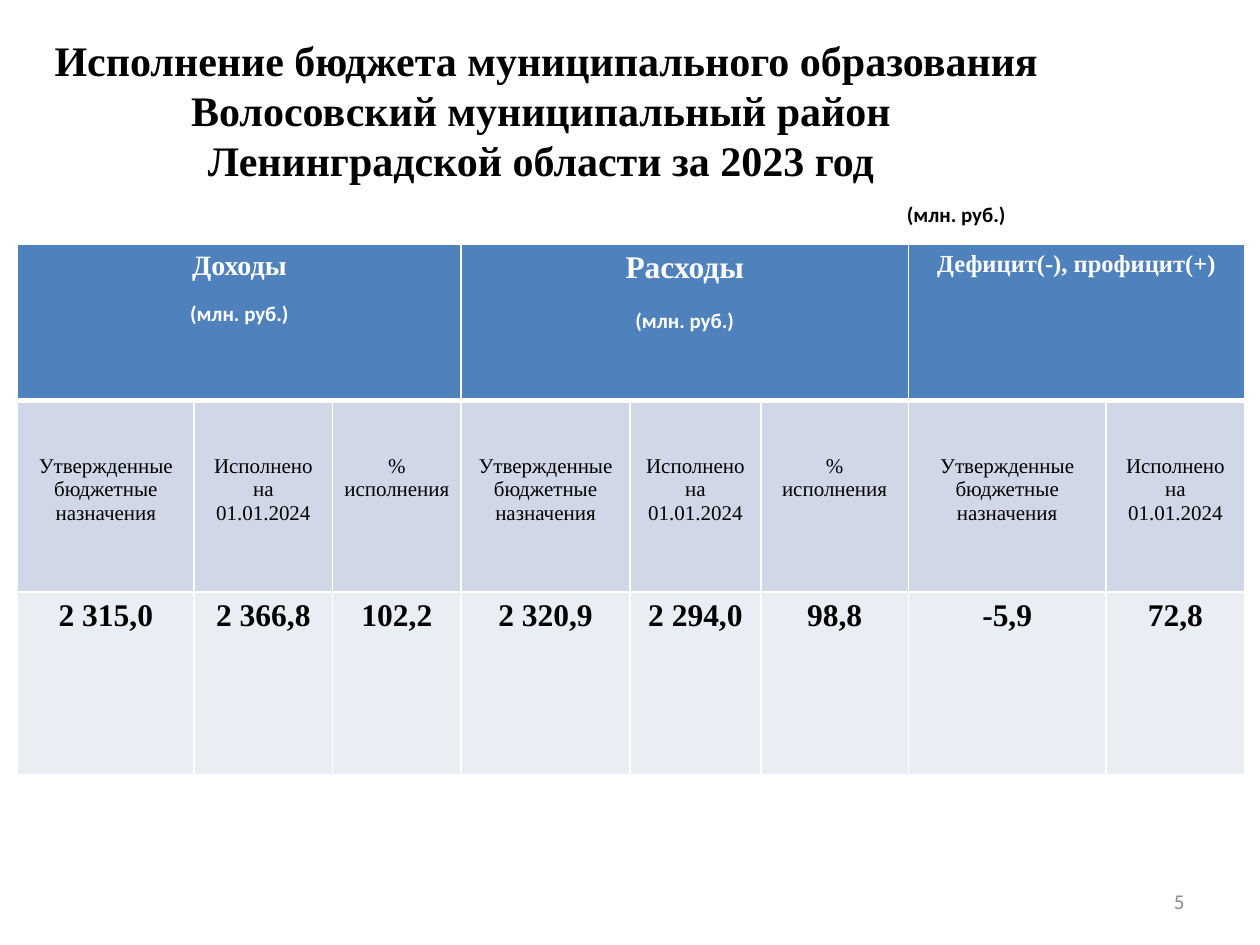
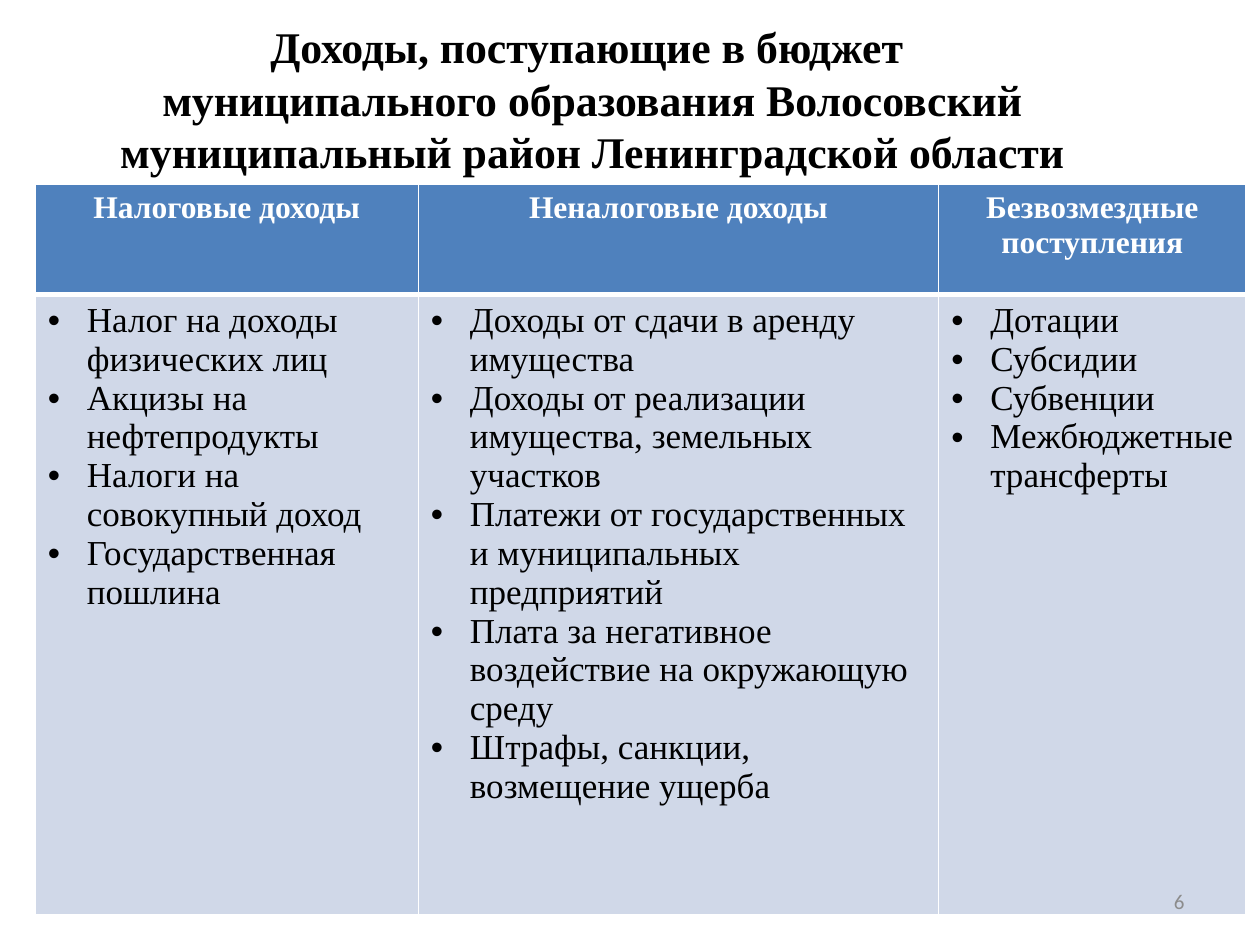
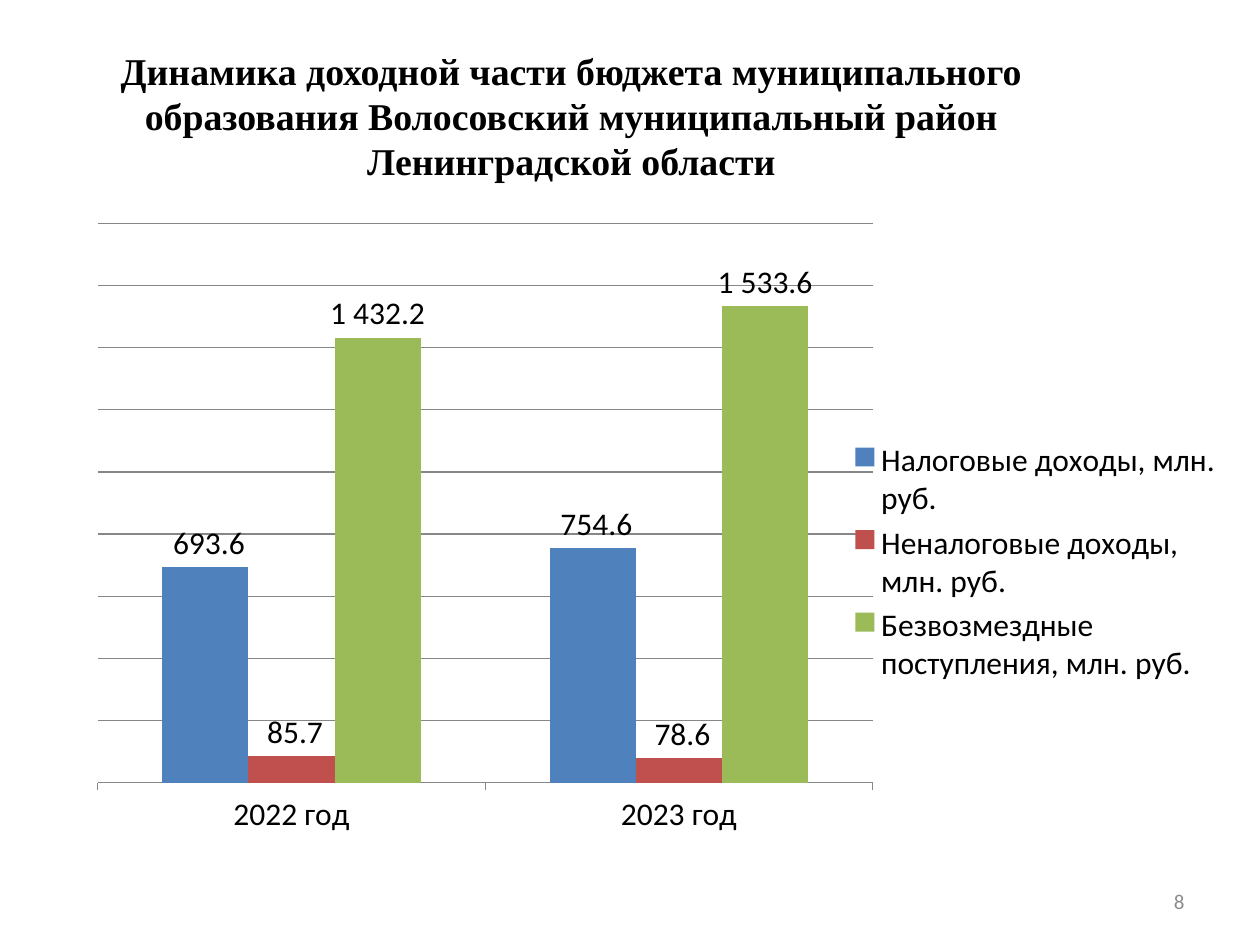
from dataclasses import dataclass

from lxml import etree
from pptx import Presentation
from pptx.chart.data import CategoryChartData
from pptx.dml.color import RGBColor
from pptx.enum.chart import XL_CHART_TYPE, XL_LABEL_POSITION, XL_LEGEND_POSITION, XL_TICK_MARK
from pptx.enum.text import MSO_ANCHOR, PP_ALIGN
from pptx.oxml import parse_xml
from pptx.oxml.ns import nsdecls, qn
from pptx.util import Emu, Pt

LEFT, CENTER, RIGHT = PP_ALIGN.LEFT, PP_ALIGN.CENTER, PP_ALIGN.RIGHT
TOP, MIDDLE = MSO_ANCHOR.TOP, MSO_ANCHOR.MIDDLE
COLUMNS = XL_CHART_TYPE.COLUMN_CLUSTERED
OUTSIDE_END = XL_LABEL_POSITION.OUTSIDE_END
LEGEND_RIGHT = XL_LEGEND_POSITION.RIGHT
TICK_OUT = XL_TICK_MARK.OUTSIDE

EMU_PER_PX = 9144  # 100 px to the inch


@dataclass(frozen=True)
class Theme:
    serif: str = "Times New Roman"
    sans: str = "Calibri"
    text: str = "000000"
    light: str = "FFFFFF"
    muted: str = "8C8C8C"
    grid: str = "878787"
    header_fill: str = "4F81BD"
    band_fill: str = "D0D8E8"
    pale_fill: str = "E9EDF4"
    series: tuple = ("4F81BD", "C0504D", "9BBB59")
    small: int = 12
    note: int = 14
    heading: int = 16
    large: int = 18
    body: int = 20


THEME = Theme()


def px(length):
    return Emu(length * EMU_PER_PX)


def add_bullet(paragraph, indent):
    properties = paragraph._p.get_or_add_pPr()
    properties.set("marL", str(px(indent)))
    properties.set("indent", str(-px(indent)))
    font = etree.SubElement(properties, qn("a:buFont"))
    font.set("typeface", "Arial")
    etree.SubElement(properties, qn("a:buChar")).set("char", "•")


def write(frame, text, size=THEME.small, font=THEME.serif, color=THEME.text, bold=False,
          align=LEFT, bullet=0, append=False, space_before=0):
    """Write each line of text as a paragraph; append keeps what is there."""
    for number, line in enumerate(text.split("\n")):
        is_first = number == 0 and not append
        paragraph = frame.paragraphs[0] if is_first else frame.add_paragraph()
        paragraph.text = line
        paragraph.alignment = align
        if space_before and not is_first:
            paragraph.space_before = Pt(space_before)
        if bullet:
            add_bullet(paragraph, bullet)
        for run in paragraph.runs:
            run.font.size = Pt(size)
            run.font.name = font
            run.font.bold = bold
            run.font.color.rgb = RGBColor.from_string(color)


class Deck:
    def __init__(self, theme):
        self.theme = theme
        self.presentation = Presentation()
        self.presentation.slide_width = px(1000)
        self.presentation.slide_height = px(750)
        self.slide = None

    def new_slide(self, page):
        self.slide = self.presentation.slides.add_slide(self.presentation.slide_layouts[6])
        self.page = page

    def text(self, box, text, anchor=TOP, bottom=5, **style):
        shape = self.slide.shapes.add_textbox(*map(px, box))
        frame = shape.text_frame
        frame.word_wrap = True
        frame.vertical_anchor = anchor
        frame.margin_bottom = px(bottom)
        write(frame, text, **style)

    def title(self, box, text, size, bottom=5):
        self.text(box, text, anchor=MIDDLE, bottom=bottom, size=size, bold=True, align=CENTER)

    def page_number(self):
        self.text((717, 695, 233, 40), self.page, anchor=MIDDLE, font=self.theme.sans,
                  color=self.theme.muted, align=RIGHT)

    def table(self, left, top, widths, heights, fills):
        """Add a table whose rows have the given fills; the first is the header."""
        frame = self.slide.shapes.add_table(len(heights), len(widths), px(left), px(top),
                                            px(sum(widths)), px(sum(heights)))
        table = frame.table
        table.first_row = table.horz_banding = False
        for column, width in zip(table.columns, widths):
            column.width = px(width)
        for index, (row, height, fill) in enumerate(zip(table.rows, heights, fills)):
            row.height = px(height)
            for cell in row.cells:
                self.borders(cell, top=3 if index == 1 else 1, bottom=3 if index == 0 else 1)
                cell.fill.solid()
                cell.fill.fore_color.rgb = RGBColor.from_string(fill)
        return table

    def borders(self, cell, top, bottom):
        properties = cell._tc.get_or_add_tcPr()
        for side, width in (("L", 1), ("R", 1), ("T", top), ("B", bottom)):
            properties.append(parse_xml(
                f'<a:ln{side} {nsdecls("a")} w="{Pt(width)}"><a:solidFill>'
                f'<a:srgbClr val="{self.theme.light}"/></a:solidFill></a:ln{side}>'))

    def cell(self, cell, text, side=10, top=5, **style):
        cell.margin_left = cell.margin_right = px(side)
        cell.margin_top = px(top)
        write(cell.text_frame, text, **style)

    def column_chart(self, box, categories, series, plot, number_format):
        data = CategoryChartData(number_format=number_format)
        data.categories = categories
        for name, values in series:
            data.add_series(name, values)
        chart = self.slide.shapes.add_chart(COLUMNS, *map(px, box), data).chart
        chart.has_title = False
        chart.font.size = Pt(self.theme.large)
        chart.font.name = self.theme.sans
        chart.font.color.rgb = RGBColor.from_string(self.theme.text)

        # Axes
        grid_color = RGBColor.from_string(self.theme.grid)
        value_axis = chart.value_axis
        value_axis.visible = False
        value_axis.minimum_scale, value_axis.maximum_scale = 0, 1800
        value_axis.major_unit = 200
        value_axis.has_major_gridlines = True
        category_axis = chart.category_axis
        category_axis.major_tick_mark = TICK_OUT
        for line in (value_axis.major_gridlines.format.line, category_axis.format.line):
            line.color.rgb = grid_color
            line.width = Pt(0.75)

        # Columns and labels
        columns = chart.plots[0]
        columns.gap_width = 150
        columns.overlap = 0
        columns.vary_by_categories = False
        for item, color in zip(columns.series, self.theme.series):
            item.format.fill.solid()
            item.format.fill.fore_color.rgb = RGBColor.from_string(color)
            labels = item.data_labels
            labels.show_value = True
            labels.position = OUTSIDE_END
            labels.number_format = number_format
            labels.number_format_is_linked = False

        # Legend and plot area
        chart.has_legend = True
        chart.legend.position = LEGEND_RIGHT
        chart.legend.include_in_layout = False
        area = chart._chartSpace.chart.plotArea
        for old in area.findall(qn("c:layout")):
            area.remove(old)
        sizes = "".join(f'<c:{tag} val="{value}"/>' for tag, value in zip("xywh", plot))
        area.insert(0, parse_xml(
            f'<c:layout {nsdecls("c")}><c:manualLayout><c:layoutTarget val="inner"/>'
            f'<c:xMode val="edge"/><c:yMode val="edge"/>{sizes}</c:manualLayout></c:layout>'))


def budget_execution(deck):
    theme = deck.theme
    unit = "(млн. руб.)"
    deck.new_slide("5")
    deck.title((20, 13, 827, 148),
               "Исполнение бюджета муниципального образования Волосовский муниципальный район "
               "\vЛенинградской области за 2023 год ", 24)
    table = deck.table(14, 194, (140, 110, 102, 134, 104, 117, 157, 110), (124, 152, 145),
                       (theme.header_fill, theme.band_fill, theme.pale_fill))

    # Merged group headers: first column, last column, name, size, gap before the unit
    groups = ((0, 2, "Доходы", theme.heading, 11), (3, 5, "Расходы", theme.large, 13),
              (6, 7, "Дефицит(-), профицит(+)", theme.note, 0))
    for first, last, name, size, gap in groups:
        header = table.cell(0, first)
        header.merge(table.cell(0, last))
        style = {"color": theme.light, "bold": True, "align": CENTER}
        deck.cell(header, name, side=9, size=size, **style)
        if gap:
            write(header.text_frame, unit, font=theme.sans, append=True, space_before=gap, **style)

    # Measures repeat in every group
    measures = ("Утвержденные бюджетные назначения", "Исполнено на 01.01.2024", "% исполнения")
    values = ("2 315,0", "2 366,8", "102,2", "2 320,9", "2 294,0", "98,8", "-5,9", "72,8")
    for column, value in enumerate(values):
        deck.cell(table.cell(1, column), measures[column % 3], side=9, top=43, align=CENTER)
        deck.cell(table.cell(2, column), value, side=9, size=theme.large, bold=True, align=CENTER)

    deck.text((710, 155, 196, 30), unit, font=theme.sans, bold=True)
    deck.page_number()


def income_kinds(deck):
    theme = deck.theme
    deck.new_slide("6")
    deck.title((20, 52, 900, 94),
               "Доходы, поступающие в бюджет \vмуниципального образования Волосовский "
               "муниципальный район Ленинградской области", 25, bottom=46)
    table = deck.table(28, 146, (304, 413, 244), (88, 492), (theme.header_fill, theme.band_fill))
    kinds = {
        "Налоговые доходы": (
            "Налог на доходы физических лиц", "Акцизы на нефтепродукты",
            "Налоги на совокупный доход", "Государственная пошлина"),
        "Неналоговые доходы": (
            "Доходы от сдачи в аренду имущества",
            "Доходы от реализации имущества, земельных участков",
            "Платежи от государственных и муниципальных предприятий",
            "Плата за негативное воздействие на окружающую среду",
            "Штрафы, санкции, возмещение ущерба"),
        "Безвозмездные поступления": (
            "Дотации", "Субсидии", "Субвенции", "Межбюджетные трансферты"),
    }
    for column, (name, sources) in enumerate(kinds.items()):
        deck.cell(table.cell(0, column), name, size=theme.large, color=theme.light,
                  bold=True, align=CENTER)
        deck.cell(table.cell(1, column), "\n".join(sources), size=theme.body, bullet=31)
    deck.page_number()


def income_dynamics(deck):
    deck.new_slide("8")
    deck.title((20, 29, 867, 125),
               "Динамика доходной части бюджета муниципального образования Волосовский "
               "муниципальный район Ленинградской области", 21.6)
    deck.column_chart(
        (20, 154, 961, 584), ("2022 год", "2023 год"),
        (("Налоговые доходы, млн. руб.", (693.6, 754.6)),
         ("Неналоговые доходы, млн. руб.", (85.7, 78.6)),
         ("Безвозмездные поступления, млн. руб.", (1432.2, 1533.6))),
        plot=(0.06, 0.04, 0.64, 0.76), number_format="#\\ ##0.0")
    deck.page_number()


def main():
    deck = Deck(THEME)
    budget_execution(deck)
    income_kinds(deck)
    income_dynamics(deck)
    deck.presentation.save("out.pptx")


if __name__ == "__main__":
    main()
